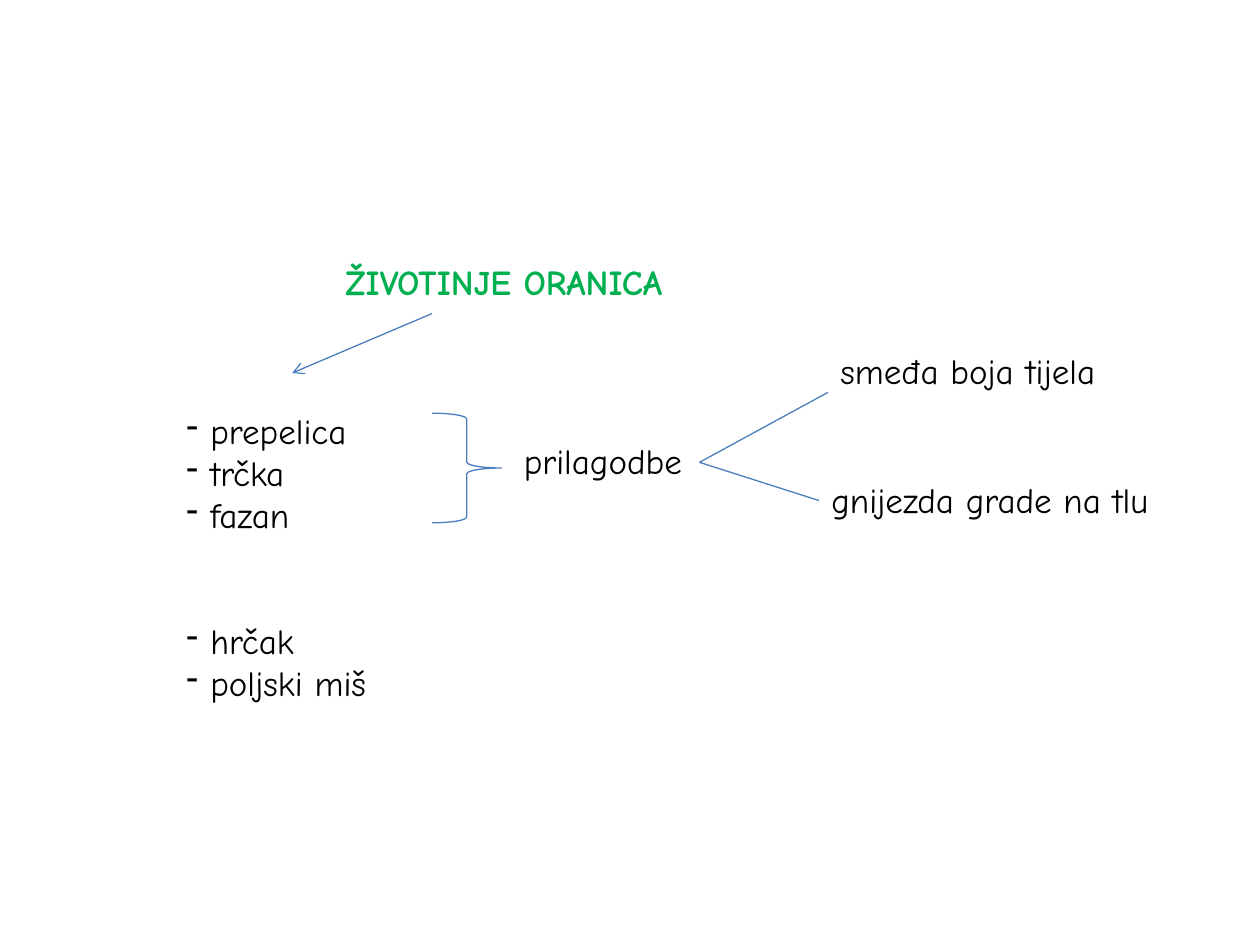
from lxml.etree import SubElement as Sub
from pptx import Presentation
from pptx.dml.color import RGBColor
from pptx.enum.shapes import MSO_CONNECTOR as Link, MSO_SHAPE as Shape
from pptx.enum.text import MSO_ANCHOR as Anchor, MSO_AUTO_SIZE as Auto, PP_ALIGN as Align
from pptx.oxml.ns import qn
from pptx.util import Cm, Pt

FONT = "Comic Neue"
BLUE = "4B7EBC"
GREEN = "00B050"
BLACK = "000000"


def color(code):
    return RGBColor.from_string(code)


def place(shape, x, y, w, h):
    shape.left, shape.top, shape.width, shape.height = Cm(x), Cm(y), Cm(w), Cm(h)


def dash(para):
    props = para._p.get_or_add_pPr()
    props.set("marL", str(Cm(0.48)))
    props.set("indent", str(-Cm(0.48)))
    Sub(props, qn("a:buChar"), char="-")


def write(shape, text, size=20, ink=BLACK, bold=False, dashes=False, gaps=None):
    frame = shape.text_frame
    frame.word_wrap = True
    frame.auto_size = Auto.NONE
    frame.vertical_anchor = Anchor.TOP
    for i, line in enumerate(text.split("\n")):
        para = frame.paragraphs[0] if i == 0 else frame.add_paragraph()
        para.alignment = Align.LEFT
        if gaps and line in gaps:
            para.space_before = Pt(gaps[line])
        if dashes:
            dash(para)
        run = para.add_run()
        run.text = line
        run.font.name = FONT
        run.font.size = Pt(size)
        run.font.bold = bold
        run.font.color.rgb = color(ink)
    return shape


def label(slide, text, box, **style):
    shape = slide.shapes.add_textbox(*map(Cm, box))
    return write(shape, text, **style)


def draw(slide, start, end, arrow=False):
    line = slide.shapes.add_connector(Link.STRAIGHT, *map(Cm, start + end))
    line.line.color.rgb = color(BLUE)
    line.line.width = Pt(0.75)
    if arrow:
        Sub(line.line._get_or_add_ln(), qn("a:tailEnd"), type="arrow")
    Sub(line._element.spPr, qn("a:effectLst"))
    return line


def heading(slide, x, y, w, h):
    title = slide.shapes.title
    place(title, x, y, w, h)
    write(title, "ŽIVOTINJE ORANICA", ink=GREEN, bold=True)
    draw(slide, (x + 2, y + 1.19), (x - 0.82, y + 2.39), arrow=True)


def animals(slide, x, y, w, h):
    names = "prepelica\ntrčka\nfazan\nhrčak\npoljski miš"
    label(slide, names, (x, y, w, h), dashes=True, gaps={"hrčak": 48})
    brace = slide.shapes.add_shape(
        Shape.RIGHT_BRACE, Cm(x + 5.2), Cm(y + 0.2), Cm(1.4), Cm(2.21))
    brace.shadow.inherit = False
    brace.fill.background()
    brace.line.color.rgb = color(BLUE)
    brace.line.width = Pt(0.75)


def traits(slide, x, y, w, h):
    label(slide, "prilagodbe", (x, y, w, h))
    fork = (x + 3.79, y + 0.58)
    leaves = [
        ("smeđa boja tijela", (x + 6.38, y - 1.81, 5.99, 1.96)),
        ("gnijezda grade na tlu", (x + 6.2, y + 0.79, 8, 1.12)),
    ]
    for text, box in leaves:
        leaf = label(slide, text, box)
        draw(slide, fork, (box[0], box[1] + box[3] / 2)).end_connect(leaf, 1)


def main():
    deck = Presentation()
    deck.slide_width, deck.slide_height = Cm(25.4), Cm(19.05)
    slide = deck.slides.add_slide(deck.slide_layouts[5])
    heading(slide, 6.71, 5.13, 9.8, 1.12)
    animals(slide, 3.51, 8.13, 4.6, 6.25)
    traits(slide, 10.31, 8.74, 4.19, 1.12)
    deck.save("out.pptx")


if __name__ == "__main__":
    main()
